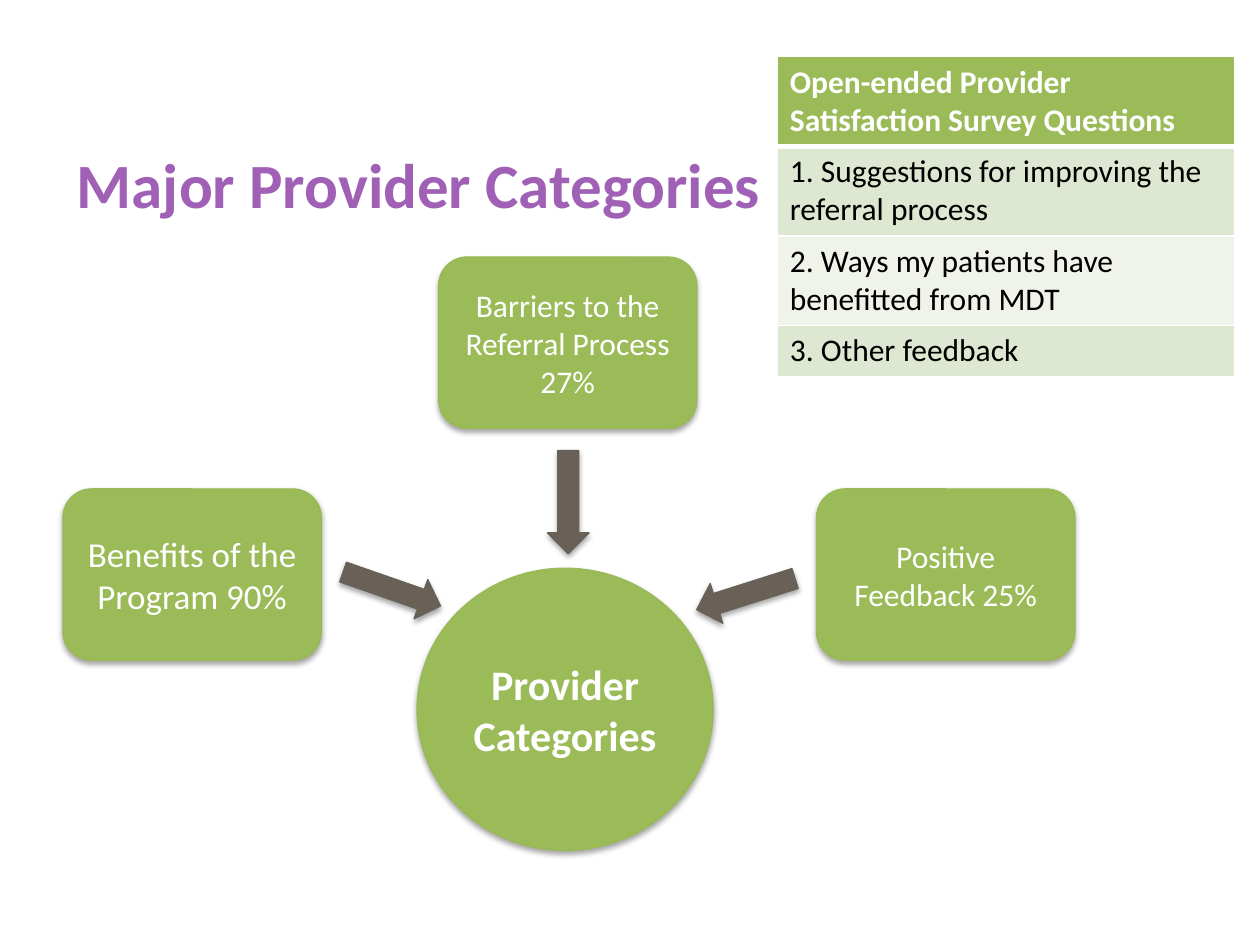
import lxml.etree
import pptx
import pptx.dml.color
import pptx.enum.shapes
import pptx.enum.text
import pptx.oxml
import pptx.oxml.ns
import pptx.util

Pt = pptx.util.Pt
RGBColor = pptx.dml.color.RGBColor
MSO_SHAPE = pptx.enum.shapes.MSO_SHAPE
PP_ALIGN = pptx.enum.text.PP_ALIGN
MSO_ANCHOR = pptx.enum.text.MSO_ANCHOR
qn = pptx.oxml.ns.qn

PURPLE = RGBColor(0x9F, 0x60, 0xB5)
GREEN = RGBColor(0x9B, 0xBB, 0x59)
GREEN_EDGE = RGBColor(0x98, 0xB9, 0x55)
BROWN = RGBColor(0x69, 0x61, 0x58)
BAND_DARK = RGBColor(0xDE, 0xE7, 0xD1)
BAND_LIGHT = RGBColor(0xEF, 0xF3, 0xEA)
WHITE = RGBColor(0xFF, 0xFF, 0xFF)
BLACK = RGBColor(0, 0, 0)

SHADOW = (
    '<a:outerShdw xmlns:a="http://schemas.openxmlformats.org/drawingml/2006/main"'
    ' blurRad="%d" dist="%d" dir="5400000" rotWithShape="0">'
    '<a:srgbClr val="000000"><a:alpha val="35000"/></a:srgbClr></a:outerShdw>'
) % (Pt(3.1), Pt(1.8))


def add_run(text_frame, text, size, color, bold=False):
    run = text_frame.paragraphs[0].add_run()
    run.text = text
    run.font.name = "Calibri"
    run.font.size = Pt(size)
    run.font.bold = bold
    run.font.color.rgb = color


def add_shadowed_shape(kind, left, top, width, height, fill, edge):
    shape = slide.shapes.add_shape(kind, Pt(left), Pt(top), Pt(width), Pt(height))
    shape.fill.solid()
    shape.fill.fore_color.rgb = fill
    shape.line.color.rgb = edge
    shape.line.width = Pt(0.75)
    shape.shadow.inherit = False
    effects = shape._element.spPr.find(qn("a:effectLst"))
    effects.append(pptx.oxml.parse_xml(SHADOW))
    return shape


presentation = pptx.Presentation()
presentation.slide_width = Pt(720)
presentation.slide_height = Pt(540)
slide = presentation.slides.add_slide(presentation.slide_layouts[5])

# Title
title = slide.shapes.title
title.left, title.top, title.width, title.height = Pt(36.7), Pt(62.6), Pt(648), Pt(84.2)
title.text_frame.vertical_anchor = MSO_ANCHOR.MIDDLE
title.text_frame.paragraphs[0].alignment = PP_ALIGN.LEFT
add_run(title.text_frame, "Major Provider Categories", 36, PURPLE, bold=True)

# Arrows pointing at the hub: left, top, rotation
for left, top, rotation in [(194.4, 324.7, 19.2), (295.2, 275, 90), (396.7, 327.6, 162.4)]:
    arrow = add_shadowed_shape(MSO_SHAPE.RIGHT_ARROW, left, top, 59, 23.8, BROWN, BROWN)
    arrow.rotation = rotation

# Hub and categories
BOX = (147.6, 97.9)
for kind, text, position, extent, size, bold in [
    (MSO_SHAPE.OVAL, "Provider Categories", (238.3, 324.7), (169.2, 161.3), 24, True),
    (MSO_SHAPE.ROUNDED_RECTANGLE, "Benefits of the Program 90%", (36, 279.4), BOX, 20, False),
    (MSO_SHAPE.ROUNDED_RECTANGLE, "Barriers to the Referral Process 27%", (250.6, 146.9), BOX, 18, False),
    (MSO_SHAPE.ROUNDED_RECTANGLE, "Positive Feedback 25%", (466.6, 279.4), BOX, 18, False),
]:
    node = add_shadowed_shape(kind, *position, *extent, GREEN, GREEN_EDGE)
    node.text_frame.word_wrap = True
    node.text_frame.vertical_anchor = MSO_ANCHOR.MIDDLE
    node.text_frame.paragraphs[0].alignment = PP_ALIGN.CENTER
    add_run(node.text_frame, text, size, WHITE, bold)

# Survey questions table
rows = [
    ("Open-ended Provider Satisfaction Survey Questions", 50.4, GREEN),
    ("1. Suggestions for improving the referral process", 50.4, BAND_DARK),
    ("2. Ways my patients have benefitted from MDT", 50.4, BAND_LIGHT),
    ("3. Other feedback", 29.2, BAND_DARK),
]
table = slide.shapes.add_table(len(rows), 1, Pt(444.2), Pt(32.4), Pt(261.4), Pt(180.4)).table
for index, (text, height, fill) in enumerate(rows):
    header = index == 0
    table.rows[index].height = Pt(height)
    cell = table.cell(index, 0)
    add_run(cell.text_frame, text, 18, WHITE if header else BLACK, bold=header)
    properties = cell._tc.get_or_add_tcPr()
    for side in ("L", "R", "T", "B"):
        thick = (header and side == "B") or (index == 1 and side == "T")
        border = lxml.etree.SubElement(properties, qn("a:ln" + side), w=str(Pt(3 if thick else 1)))
        border_fill = lxml.etree.SubElement(border, qn("a:solidFill"))
        lxml.etree.SubElement(border_fill, qn("a:srgbClr"), val=str(WHITE))
    cell.fill.solid()
    cell.fill.fore_color.rgb = fill

presentation.save("out.pptx")
